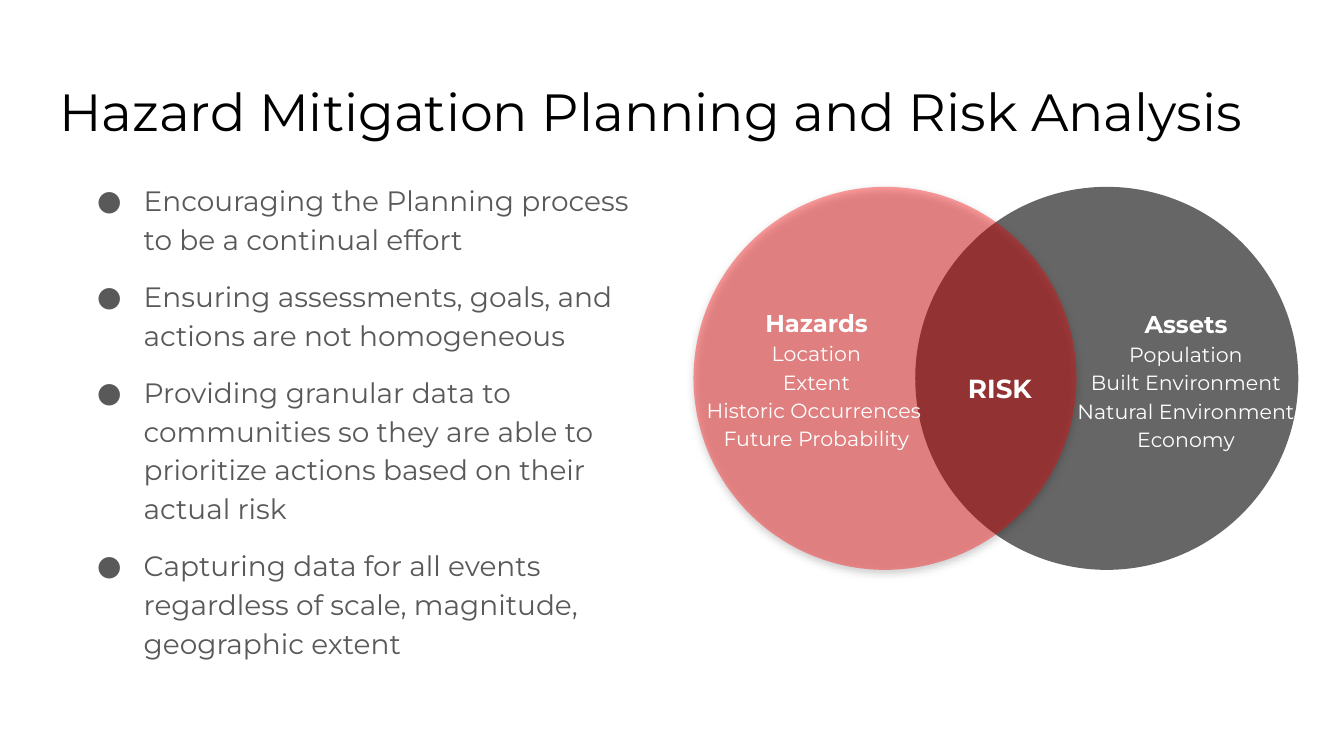
from dataclasses import dataclass

from lxml import etree
from pptx import Presentation
from pptx.dml.color import RGBColor as RGB
from pptx.enum.shapes import MSO_SHAPE as Shape
from pptx.enum.text import MSO_ANCHOR as Anchor, MSO_AUTO_SIZE as Fit, PP_ALIGN as Align
from pptx.oxml import parse_xml
from pptx.oxml.ns import nsdecls, qn
from pptx.util import Pt


@dataclass(frozen=True)
class Theme:
    font: str = "Montserrat"
    black: str = "000000"
    white: str = "FFFFFF"
    text: str = "595959"
    asset: str = "666666"
    hazard: str = "FF0000"
    title: int = 28
    body: int = 15
    risk: int = 14
    head: int = 13
    item: int = 11


theme = Theme()


def frame(shape, anchor=Anchor.TOP):
    """Give a shape's text frame its insets, wrapping and anchor."""
    tf = shape.text_frame
    tf.word_wrap = True
    tf.auto_size = Fit.NONE
    tf.vertical_anchor = anchor
    tf.margin_left = tf.margin_right = tf.margin_top = tf.margin_bottom = Pt(7.2)
    return tf


def write(tf, index, text, size, color, align=Align.CENTER, bold=False):
    """Write one paragraph as a single run and return the paragraph."""
    para = tf.add_paragraph() if index else tf.paragraphs[0]
    para.alignment = align
    run = para.add_run()
    run.text = text
    run.font.name = theme.font
    run.font.size = Pt(size)
    run.font.bold = bold
    run.font.color.rgb = RGB.from_string(color)
    return para


deck = Presentation()
deck.slide_width, deck.slide_height = Pt(720), Pt(405)
slide = deck.slides.add_slide(deck.slide_layouts[1])
shapes = slide.shapes

# Title
title = shapes.title
title.left, title.top, title.width, title.height = Pt(24.5), Pt(35.3), Pt(671), Pt(45.4)
write(frame(title), 0, "Hazard Mitigation Planning and Risk Analysis",
      theme.title, theme.black, Align.LEFT)

# Bullet list
body = slide.placeholders[1]
body.left, body.top, body.width, body.height = Pt(33.8), Pt(88.6), Pt(326.2), Pt(272.2)
points = [
    "Encouraging the Planning process to be a continual effort",
    "Ensuring assessments, goals, and actions are not homogeneous",
    "Providing granular data to communities so they are able to prioritize "
    "actions based on their actual risk",
    "Capturing data for all events regardless of scale, magnitude, geographic extent",
]
tf = frame(body)
for i, point in enumerate(points):
    para = write(tf, i, point, theme.body, theme.text, Align.LEFT)
    props = para._p.get_or_add_pPr()
    props.set("marL", str(Pt(36)))
    props.set("indent", str(Pt(-25)))
    color = etree.SubElement(props, qn("a:buClr"))
    etree.SubElement(color, qn("a:srgbClr"), val=theme.text)
    etree.SubElement(props, qn("a:buFont"), typeface=theme.font)
    etree.SubElement(props, qn("a:buChar"), char="●")
    para.line_spacing = 1.15
    para.space_before = Pt(10 if i else 0)
    para.space_after = Pt(0)

# Venn circles, each with its label
size = 205.2
circles = [
    (490.3, theme.asset, (568.1, 153.4, 134.6, 98.6), "Assets",
     ["Population", "Built Environment", "Natural Environment", "Economy"]),
    (371.5, theme.hazard, (371.5, 151.2, 131.8, 102.2), "Hazards",
     ["Location", "Extent", "Historic Occurrences", "Future Probability"]),
]
for left, color, box, head, items in circles:
    disc = shapes.add_shape(Shape.OVAL, Pt(left), Pt(100.1), Pt(size), Pt(size))
    disc.shadow.inherit = False
    disc.fill.solid()
    disc.fill.fore_color.rgb = RGB.from_string(color)
    disc.line.fill.background()
    label = frame(shapes.add_textbox(*map(Pt, box)), Anchor.MIDDLE)
    write(label, 0, head, theme.head, theme.white, bold=True).line_spacing = 1.15
    for i, item in enumerate(items, 1):
        align = Align.LEFT if item == "Historic Occurrences" else Align.CENTER
        write(label, i, item, theme.item, theme.white, align).line_spacing = 1.15

# The hazard disc, drawn last, is see-through and casts a soft shadow
props = disc._element.spPr
tint = props.find(qn("a:solidFill")).find(qn("a:srgbClr"))
etree.SubElement(tint, qn("a:alpha"), val="38000")
props.find(qn("a:effectLst")).append(parse_xml(
    f'<a:outerShdw {nsdecls("a")} blurRad="{Pt(4.5)}" dist="{Pt(1.5)}" dir="5400000" '
    f'algn="bl" rotWithShape="0"><a:srgbClr val="{theme.black}">'
    '<a:alpha val="50000"/></a:srgbClr></a:outerShdw>'))

# Overlap label
risk = shapes.add_textbox(Pt(503.3), Pt(192.2), Pt(64.8), Pt(20.9))
write(frame(risk), 0, "RISK", theme.risk, theme.white, bold=True)

deck.save("out.pptx")
